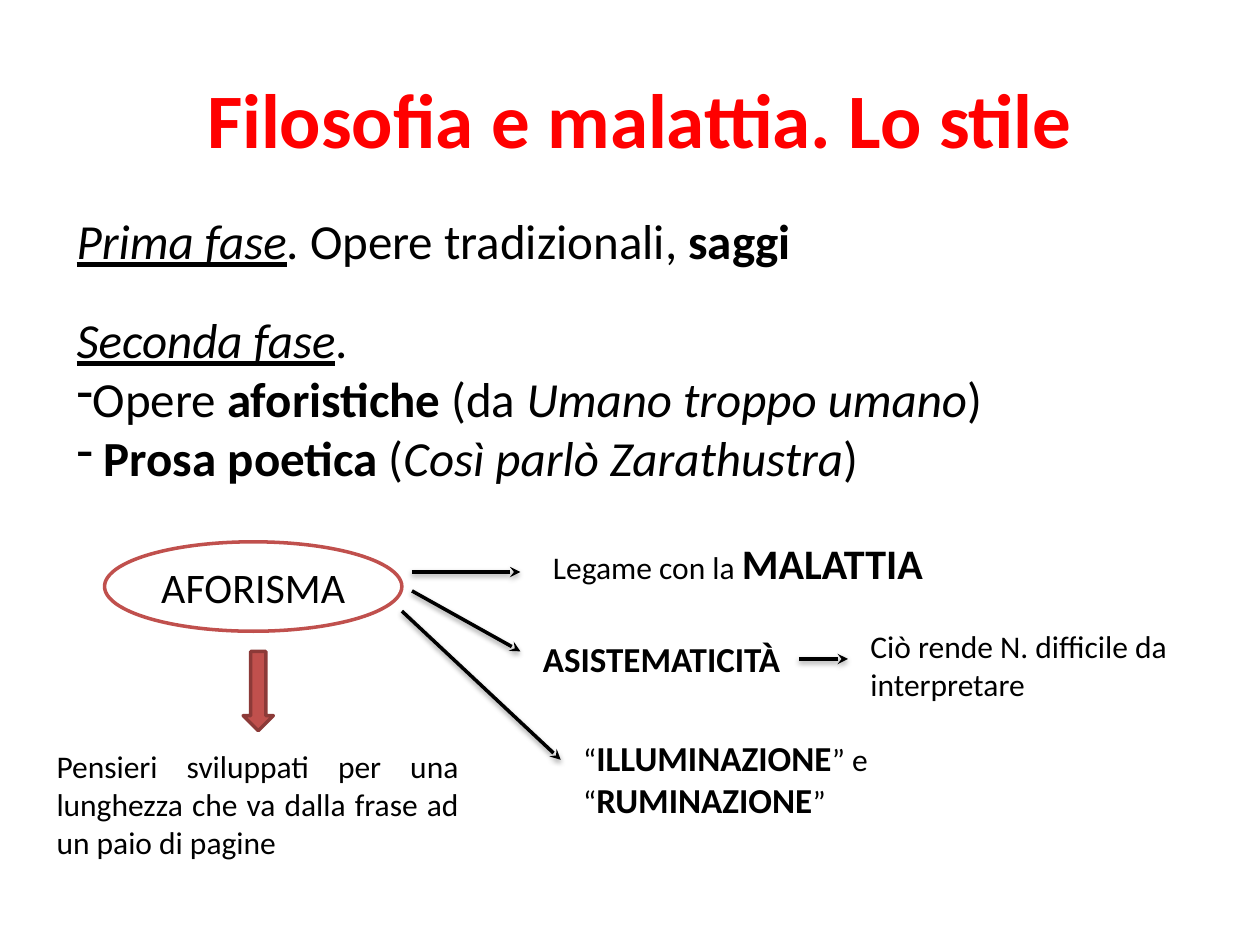
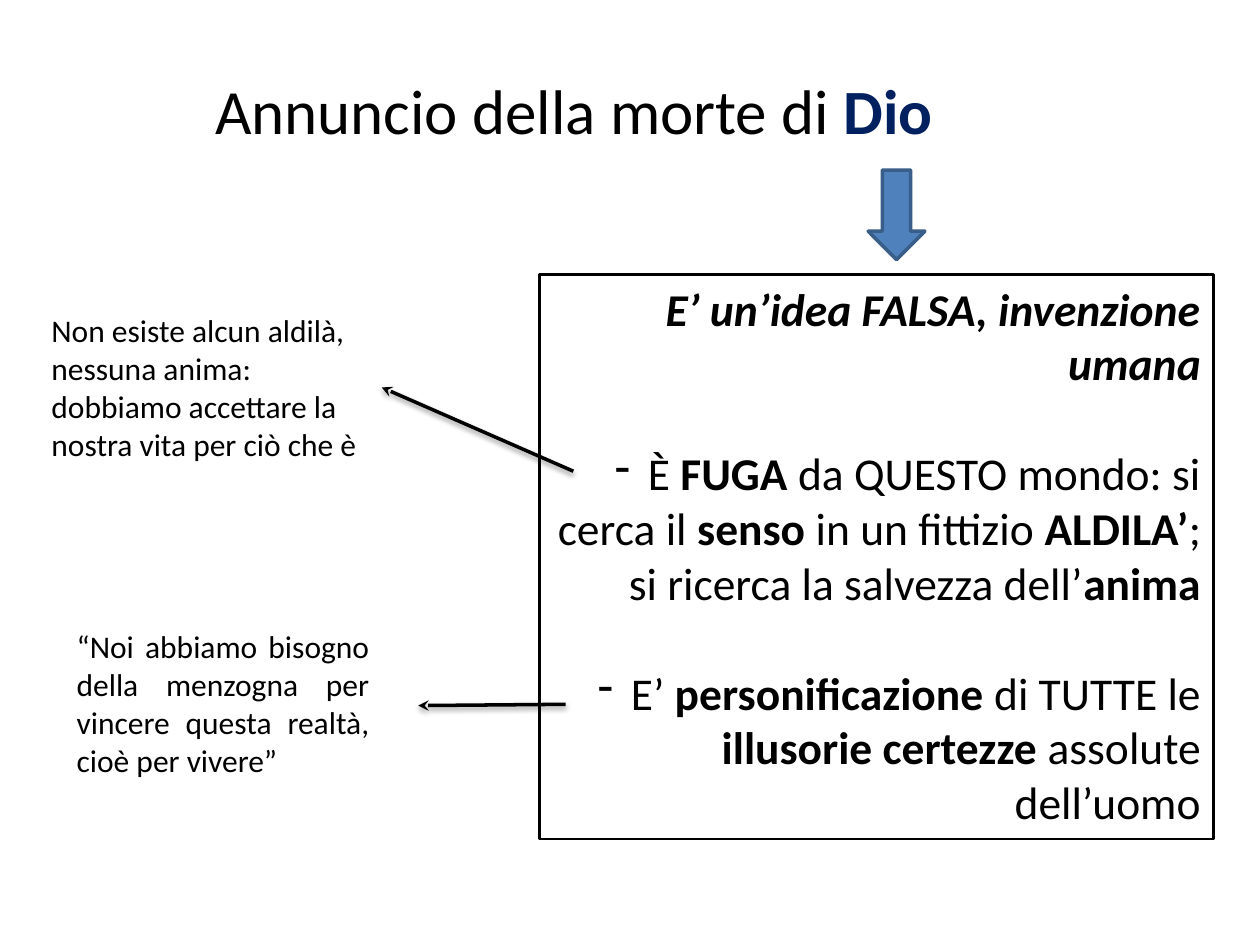
from lxml import etree
from pptx import Presentation
from pptx.dml.color import RGBColor
from pptx.enum.shapes import MSO_CONNECTOR, MSO_SHAPE
from pptx.enum.text import MSO_ANCHOR, MSO_AUTO_SIZE, PP_ALIGN
from pptx.oxml.ns import qn
from pptx.util import Inches, Pt

LEFT, CENTER, RIGHT, JUSTIFY = (PP_ALIGN.LEFT, PP_ALIGN.CENTER,
                                PP_ALIGN.RIGHT, PP_ALIGN.JUSTIFY)
TOP, MIDDLE = MSO_ANCHOR.TOP, MSO_ANCHOR.MIDDLE
FIT = MSO_AUTO_SIZE.SHAPE_TO_FIT_TEXT
RECT, OVAL, DOWN = MSO_SHAPE.RECTANGLE, MSO_SHAPE.OVAL, MSO_SHAPE.DOWN_ARROW
STRAIGHT = MSO_CONNECTOR.STRAIGHT
SIDE_RIGHT = 3

BLACK, WHITE, TITLE_RED, NAVY = "000000", "FFFFFF", "FF0000", "002060"
RED, DARK_RED, BLUE, DARK_BLUE = "C0504D", "8C3A38", "4F81BD", "395E89"
NOTE, STRONG, LABEL, POINT, BODY = 18, 20, 24, 26, 28
COLS, ROWS = 100, 75


def rgb(color):
    return RGBColor.from_string(color)


def child(parent, tag, **attrs):
    return etree.SubElement(parent, qn(tag), attrs)


class Deck:
    """Places elements on the current slide, in columns and rows of the grid."""

    font = "Calibri"

    def __init__(self):
        self.prs = Presentation()
        self.prs.slide_width, self.prs.slide_height = Inches(10), Inches(7.5)
        self.col = self.prs.slide_width / COLS
        self.row = self.prs.slide_height / ROWS

    def new_slide(self):
        self.s = self.prs.slides.add_slide(self.prs.slide_layouts[6])

    def place(self, x, y):
        return round(x * self.col), round(y * self.row)

    def add_runs(self, tf, paragraphs, size, align, anchor=TOP):
        """Each paragraph is a list of (text, flags, overrides) runs."""
        tf.word_wrap, tf.vertical_anchor = True, anchor
        for i, runs in enumerate(paragraphs):
            p = tf.paragraphs[0] if i == 0 else tf.add_paragraph()
            p.alignment = align
            for text, flags, *more in runs:
                style = more[0] if more else {}
                r = p.add_run()
                r.text = text
                r.font.name = style.get("font", self.font)
                r.font.size = Pt(style.get("size", size))
                r.font.color.rgb = rgb(style.get("color", BLACK))
                r.font.bold, r.font.italic = "b" in flags, "i" in flags
                r.font.underline = "u" in flags

    def text(self, x, y, w, h, *paragraphs, size=NOTE, align=LEFT):
        sp = self.s.shapes.add_textbox(*self.place(x, y), *self.place(w, h))
        self.add_runs(sp.text_frame, paragraphs, size, align)
        sp.text_frame.auto_size = FIT
        return sp

    def shape(self, kind, x, y, w, h, fill, line, width=2):
        sp = self.s.shapes.add_shape(kind, *self.place(x, y), *self.place(w, h))
        sp.shadow.inherit = False
        if fill:
            sp.fill.solid()
            sp.fill.fore_color.rgb = rgb(fill)
        else:
            sp.fill.background()
        sp.line.color.rgb, sp.line.width = rgb(line), Pt(width)
        return sp

    def arrow(self, start, end, start_at=None, end_at=None):
        """start_at and end_at are (shape, side) pairs to join to."""
        c = self.s.shapes.add_connector(STRAIGHT, *self.place(*start),
                                        *self.place(*end))
        if start_at:
            c.begin_connect(*start_at)
        if end_at:
            c.end_connect(*end_at)
        c.line.color.rgb, c.line.width = rgb(BLACK), Pt(2)
        spPr = c.element.spPr
        child(spPr.find(qn("a:ln")), "a:tailEnd", type="stealth")
        effects = child(spPr, "a:effectLst")
        shadow = child(effects, "a:outerShdw", blurRad="40000", dist="20000",
                       dir="5400000", rotWithShape="0")
        child(child(shadow, "a:srgbClr", val=BLACK), "a:alpha", val="38000")

    def dash(self, p):
        """Gives a paragraph a hanging dash bullet."""
        pPr = p._p.get_or_add_pPr()
        pPr.set("marL", "0")
        pPr.set("indent", str(-Inches(0.18)))
        child(child(pPr, "a:buClr"), "a:srgbClr", val=BLACK)
        child(pPr, "a:buChar", char="-")


def style_slide(d):
    d.new_slide()
    d.text(5.9, 5.2, 89.8, 8.4,
           [("Filosofia e malattia. Lo stile", "b", {"color": TITLE_RED})],
           size=44, align=CENTER)
    d.text(5.1, 16.2, 64.6, 5.7,
           [("Prima fase", "iu"), (". Opere tradizionali, ", ""), ("saggi", "b")],
           size=BODY, align=JUSTIFY)
    second_phase = d.text(
        5.1, 24.1, 80.3, 15.1,
        [("Seconda fase", "iu"), (". ", "")],
        [("Opere ", ""), ("aforistiche", "b"), (" (da ", ""),
         ("Umano troppo umano", "i"), (")", "")],
        [(" Prosa poetica ", "b"), ("(", ""), ("Così parlò Zarathustra", "i"),
         (")", "")],
        size=BODY, align=JUSTIFY)
    for p in second_phase.text_frame.paragraphs[1:]:
        d.dash(p)

    aphorism = d.shape(OVAL, 8.3, 43, 23.6, 7.1, WHITE, RED)
    d.add_runs(aphorism.text_frame, [[("AFORISMA", "")]], LABEL, CENTER, MIDDLE)
    d.shape(DOWN, 19.3, 51.7, 2.4, 6.3, RED, DARK_RED)
    d.text(3.5, 58.8, 33.9, 10.1,
           [("Pensieri sviluppati per una lunghezza che va dalla frase ad "
             "un paio di pagine", "")], align=JUSTIFY)

    d.text(42.9, 42.2, 31.5, 5,
           [("Legame con la ", ""), ("MALATTIA", "b", {"size": LABEL})])
    unsystematic = d.text(42.1, 50.1, 21.3, 4.4, [("ASISTEMATICITÀ", "b")],
                          size=STRONG)
    d.text(68.1, 49.3, 28.3, 7.1, [("Ciò rende N. difficile da interpretare", "")])
    d.text(45.3, 58, 26.8, 7.7,
           [("“", ""), ("ILLUMINAZIONE", "b", {"size": STRONG}), ("” e “", ""),
            ("RUMINAZIONE", "b", {"size": STRONG}), ("”", "")])

    for start, end in (((32.7, 45.4), (41.3, 45.4)),
                       ((32.7, 46.9), (41.3, 51.7)),
                       ((31.9, 48.5), (44.5, 60.3))):
        d.arrow(start, end)
    d.arrow((63.4, 52.3), (67.3, 52.3), start_at=(unsystematic, SIDE_RIGHT))


def death_of_god_slide(d):
    d.new_slide()
    d.text(16.1, 5.2, 64.6, 7.1,
           [("Annuncio della morte di ", ""), ("Dio", "b", {"color": NAVY})],
           size=36)
    idea = d.shape(RECT, 42.8, 21.8, 53.5, 44.8, None, BLACK, 1.5)
    d.add_runs(idea.text_frame, [
        [("E’ un’idea FALSA, invenzione umana", "bi")],
        [(" È ", ""), ("FUGA", "b"), (" da QUESTO mondo: si", ""),
         (" ", "", {"size": 16, "font": "Arial"}), ("cerca il ", ""),
         ("senso", "b"), (" in un fittizio ", ""), ("ALDILA’", "b"),
         ("; si ricerca la salvezza dell’", ""), ("anima", "b")],
        [(" E’ ", ""), ("personificazione", "b"), (" di TUTTE le ", ""),
         ("illusorie certezze ", "b"), ("assolute dell’uomo", "")],
    ], POINT, RIGHT)
    for p in idea.text_frame.paragraphs[1:]:
        p.space_before = Pt(31.7)
        d.dash(p)
    d.shape(DOWN, 68.9, 13.5, 4.5, 7.1, BLUE, DARK_BLUE)

    no_afterlife = d.text(
        3.1, 24.2, 27.2, 13.1,
        [("Non esiste alcun aldilà, nessuna anima: dobbiamo accettare la "
          "nostra vita per ciò che è", "")])
    d.text(5.1, 49.3, 25.2, 13.1,
           [("“Noi abbiamo bisogno della menzogna per vincere questa realtà, "
             "cioè per vivere”", "")], align=JUSTIFY)
    d.arrow((44.9, 55.9), (33.2, 56))
    d.arrow((45.5, 37.4), (30.3, 30.8), end_at=(no_afterlife, SIDE_RIGHT))


def main():
    d = Deck()
    style_slide(d)
    death_of_god_slide(d)
    d.prs.save("out.pptx")


if __name__ == "__main__":
    main()
